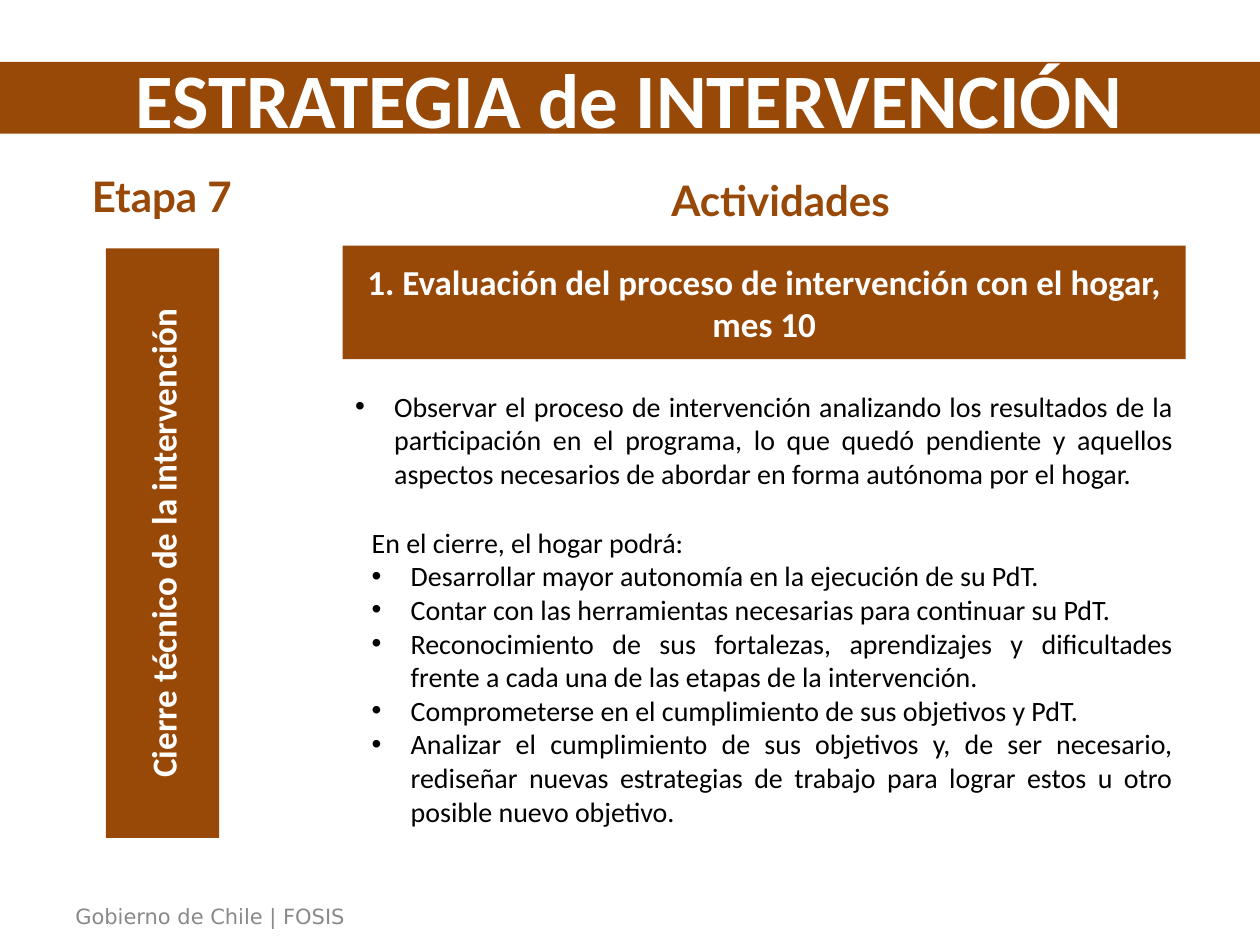
from lxml.etree import SubElement
from pptx import Presentation
from pptx.dml.color import RGBColor
from pptx.enum.shapes import MSO_SHAPE
from pptx.enum.text import MSO_ANCHOR, MSO_AUTO_SIZE, PP_ALIGN
from pptx.oxml.ns import qn
from pptx.util import Inches, Pt

BROWN, WHITE, BLACK, GREY = "984807", "FFFFFF", "000000", "898989"

deck = Presentation()
deck.slide_width, deck.slide_height = Inches(10), Inches(7.5)
column, row = deck.slide_width / 100, deck.slide_height / 75
slide = deck.slides.add_slide(deck.slide_layouts[1])
shapes = slide.shapes


def grid(left, top, width, height):
    return [round(n * unit) for n, unit in zip((left, top, width, height), (column, row) * 2)]


def write(box, *lines, size, color, font="Calibri", bold=False, fill=None, align=PP_ALIGN.CENTER,
          anchor=MSO_ANCHOR.MIDDLE, inset=1, wrap=True, bullets=()):
    if fill:
        box.fill.solid()
        box.fill.fore_color.rgb = RGBColor.from_string(fill)
        box.line.fill.background()
    frame = box.text_frame
    frame.auto_size = MSO_AUTO_SIZE.NONE
    frame.word_wrap = wrap
    frame.vertical_anchor = anchor
    frame.margin_left = frame.margin_right = round(column)
    frame.margin_top = frame.margin_bottom = round(inset * row)
    for index, line in enumerate(lines):
        paragraph = frame.add_paragraph() if index else frame.paragraphs[0]
        properties = paragraph._p.get_or_add_pPr()
        if index in bullets:
            properties.set("marL", str(round(3.1 * column)))
            properties.set("indent", str(round(-3.1 * column)))
            SubElement(properties, qn("a:buFont"), typeface="Arial")
            SubElement(properties, qn("a:buChar"), char="•")
        else:
            properties.set("marL", "0")
            properties.set("indent", "0")
            SubElement(properties, qn("a:buNone"))
        paragraph.alignment = align
        paragraph.space_before = Pt(0)
        run = paragraph.add_run()
        run.text = line
        run.font.size, run.font.name, run.font.bold = Pt(size), font, bold
        run.font.color.rgb = RGBColor.from_string(color)


title, closing = slide.placeholders
title.left, title.top, title.width, title.height = grid(0, 4.9, 100, 5.7)
write(title, "ESTRATEGIA de INTERVENCIÓN", size=44, color=WHITE, bold=True, fill=BROWN)

for heading, area in (("Etapa 7", (2.8, 13.4, 20.1, 4.3)), ("Actividades", (28.5, 13.7, 66.9, 4.3))):
    write(shapes.add_textbox(*grid(*area)), heading, size=24, color=BROWN, font="Lato", bold=True)

for label, area, turn in (
    ("Cierre técnico de la intervención", (-10.5, 38.6, 46.8, 9), 270),
    ("1. Evaluación del proceso de intervención con el hogar, mes 10", (27.2, 19.5, 66.9, 9), 0),
):
    panel = shapes.add_shape(MSO_SHAPE.RECTANGLE, *grid(*area))
    panel.rotation = turn
    panel.shadow.inherit = False
    write(panel, label, size=20, color=WHITE, bold=True, fill=BROWN)

body_format = dict(size=16, color=BLACK, align=PP_ALIGN.JUSTIFY, anchor=MSO_ANCHOR.TOP, inset=0.5)
write(
    shapes.add_textbox(*grid(27.2, 30.4, 66.9, 9.1)),
    "Observar el proceso de intervención analizando los resultados de la participación en el programa, "
    "lo que quedó pendiente y aquellos aspectos necesarios de abordar en forma autónoma por el hogar.",
    bullets=[0], **body_format,
)

closing.left, closing.top, closing.width, closing.height = grid(28.5, 41.2, 65.6, 25.2)
write(
    closing,
    "En el cierre, el hogar podrá:",
    "Desarrollar mayor autonomía en la ejecución de su PdT.",
    "Contar con las herramientas necesarias para continuar su PdT.",
    "Reconocimiento de sus fortalezas, aprendizajes y dificultades frente a cada una de las etapas "
    "de la intervención.",
    "Comprometerse en el cumplimiento de sus objetivos y PdT.",
    "Analizar el cumplimiento de sus objetivos y, de ser necesario, rediseñar nuevas estrategias "
    "de trabajo para lograr estos u otro posible nuevo objetivo.",
    bullets=range(1, 6), **body_format,
)

write(shapes.add_textbox(*grid(5, 71.2, 24.3, 3)), "Gobierno de Chile | FOSIS", size=12, color=GREY,
      font="DejaVu Sans", align=PP_ALIGN.LEFT, anchor=MSO_ANCHOR.TOP, inset=0.5, wrap=False)

deck.save("out.pptx")
